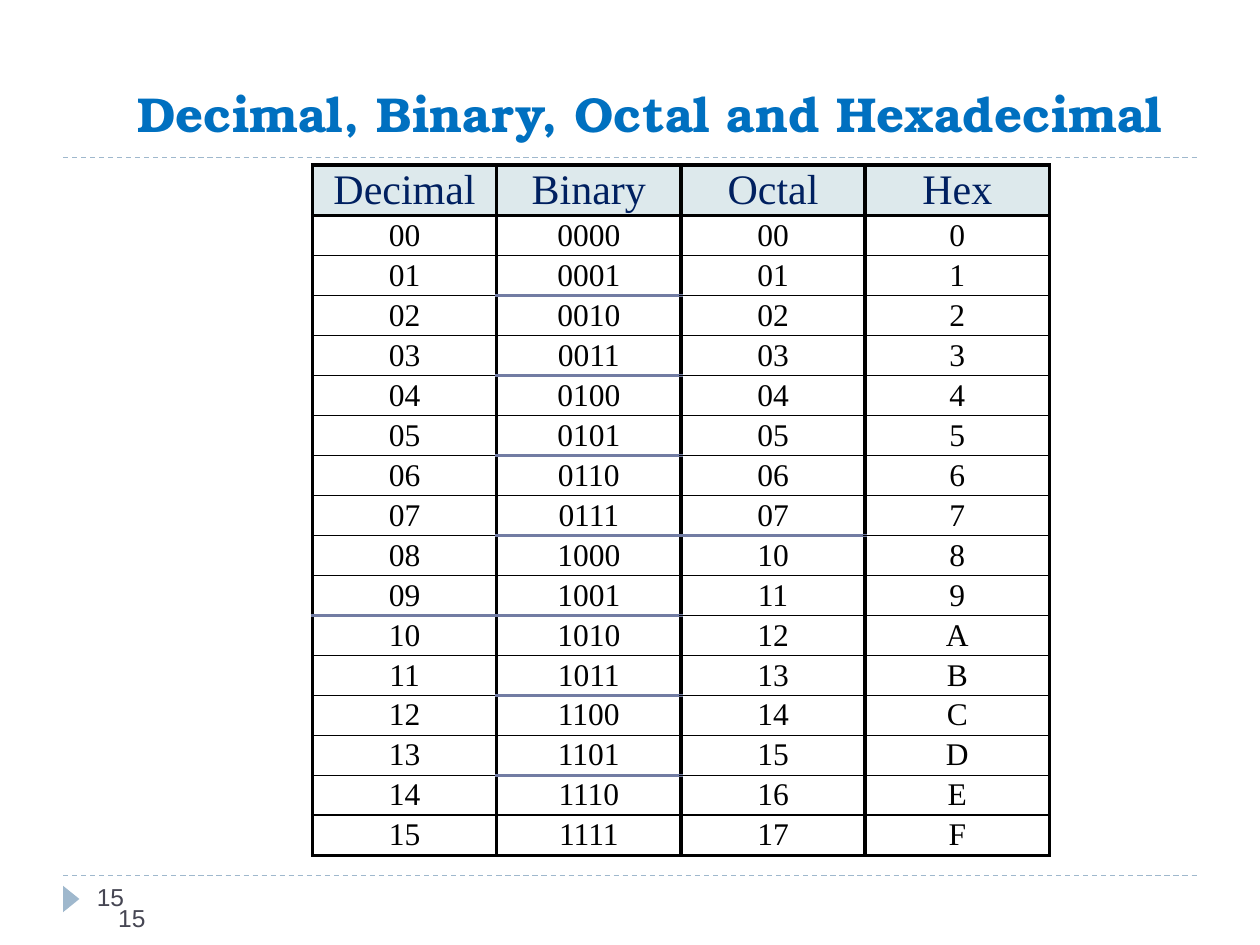
from pptx import Presentation
from pptx.dml.color import RGBColor
from pptx.enum.dml import MSO_LINE
from pptx.enum.shapes import MSO_CONNECTOR, MSO_SHAPE
from pptx.enum.text import MSO_ANCHOR, PP_ALIGN
from pptx.oxml.ns import qn
from pptx.util import Inches, Pt
from lxml.etree import SubElement

COLUMNS, ROWS = 100, 75
UNIT = Inches(0.1)
COLORS = {
    "rule": "9FB8CD",
    "title": "0070C0",
    "number": "464653",
    "heading": "002060",
    "heading_fill": "DDE9EC",
    "ink": "000000",
    "accent": "727CA3",
}
HEADINGS = ["Decimal", "Binary", "Octal", "Hex"]
FORMATS = ["02d", "04b", "02o", "X"]
ACCENT_AFTER = [{9}, set(range(1, 15, 2)), {7}, set()]
LAST = 15


class SlideBuilder:
    def __init__(self, deck):
        self.slide = deck.slides.add_slide(deck.slide_layouts[6])

    def color(self, name):
        return RGBColor.from_string(COLORS[name])

    def place(self, *cells):
        return [round(UNIT * count) for count in cells]

    def add_span(self, para, text, size, font, color, bold=False):
        span = para.add_run()
        span.text = text
        span.font.size = Pt(size)
        span.font.name = font
        span.font.bold = bold
        span.font.color.rgb = self.color(color)

    def rule(self, left, right, row):
        x1, x2, y = self.place(left, right, row)
        line = self.slide.shapes.add_connector(MSO_CONNECTOR.STRAIGHT, x1, y, x2, y)
        line.line.color.rgb = self.color("rule")
        line.line.width = Pt(0.75)
        line.line.dash_style = MSO_LINE.DASH
        SubElement(line._element.spPr, qn("a:effectLst"))

    def marker(self, *area):
        triangle = self.slide.shapes.add_shape(
            MSO_SHAPE.ISOSCELES_TRIANGLE, *self.place(*area))
        triangle.rotation = 90
        triangle.shadow.inherit = False
        triangle.fill.solid()
        triangle.fill.fore_color.rgb = self.color("rule")
        triangle.line.fill.background()

    def text(self, area, text, size, font, color, bold=False):
        box = self.slide.shapes.add_textbox(*self.place(*area))
        box.text_frame.word_wrap = True
        self.add_span(box.text_frame.paragraphs[0], text, size, font, color, bold)

    def border(self, cell, side, color, width):
        line = SubElement(cell._tc.get_or_add_tcPr(), qn(f"a:ln{side}"), w=str(Pt(width)))
        fill = SubElement(line, qn("a:solidFill"))
        SubElement(fill, qn("a:srgbClr"), val=COLORS[color])

    def cell(self, cell, text, size, color, top, bottom, fill=None):
        cell.margin_left = cell.margin_right = cell.margin_top = cell.margin_bottom = 0
        cell.vertical_anchor = MSO_ANCHOR.MIDDLE
        thick = ("ink", 2.25)
        for side, edge in zip("LRTB", (thick, thick, top, bottom)):
            self.border(cell, side, *edge)
        if fill:
            cell.fill.solid()
            cell.fill.fore_color.rgb = self.color(fill)
        else:
            cell.fill.background()
        para = cell.text_frame.paragraphs[0]
        para.alignment = PP_ALIGN.CENTER
        self.add_span(para, text, size, "Times New Roman", color)

    def edge(self, column, value):
        if value in ACCENT_AFTER[column]:
            return "accent", 2.25
        return "ink", 2.25 if value in (-1, LAST) else 1

    def number_table(self, *area):
        frame = self.slide.shapes.add_table(LAST + 2, len(HEADINGS), *self.place(*area))
        table = frame.table
        table.first_row = table.horz_banding = False
        heading_height = Inches(0.37)
        row_height = (frame.height - heading_height) // (LAST + 1)
        for index, row in enumerate(table.rows):
            row.height = row_height if index else heading_height
        for column, (heading, pattern) in enumerate(zip(HEADINGS, FORMATS)):
            self.cell(table.cell(0, column), heading, 24, "heading",
                      ("ink", 2.25), ("ink", 2.25), "heading_fill")
            for value in range(LAST + 1):
                self.cell(table.cell(value + 1, column), format(value, pattern), 18, "ink",
                          self.edge(column, value - 1), self.edge(column, value))


def main():
    deck = Presentation()
    deck.slide_width, deck.slide_height = UNIT * COLUMNS, UNIT * ROWS
    page = SlideBuilder(deck)
    for row in (69.5, 12.5):
        page.rule(5, 95, row)
    page.marker(4.6, 70.7, 2.1, 1.3)
    page.text((9.9, 6.1, 84.4, 7.3), "Decimal, Binary, Octal and Hexadecimal",
              28, "TeX Gyre Bonum", "title", True)
    page.number_table(24.8, 13.1, 58.5, 54.5)
    for left, top in ((6.7, 69.5), (8.4, 71.2)):
        page.text((left, top, 21.7, 4), "15", 14, "Arial", "number")
    deck.save("out.pptx")


if __name__ == "__main__":
    main()
